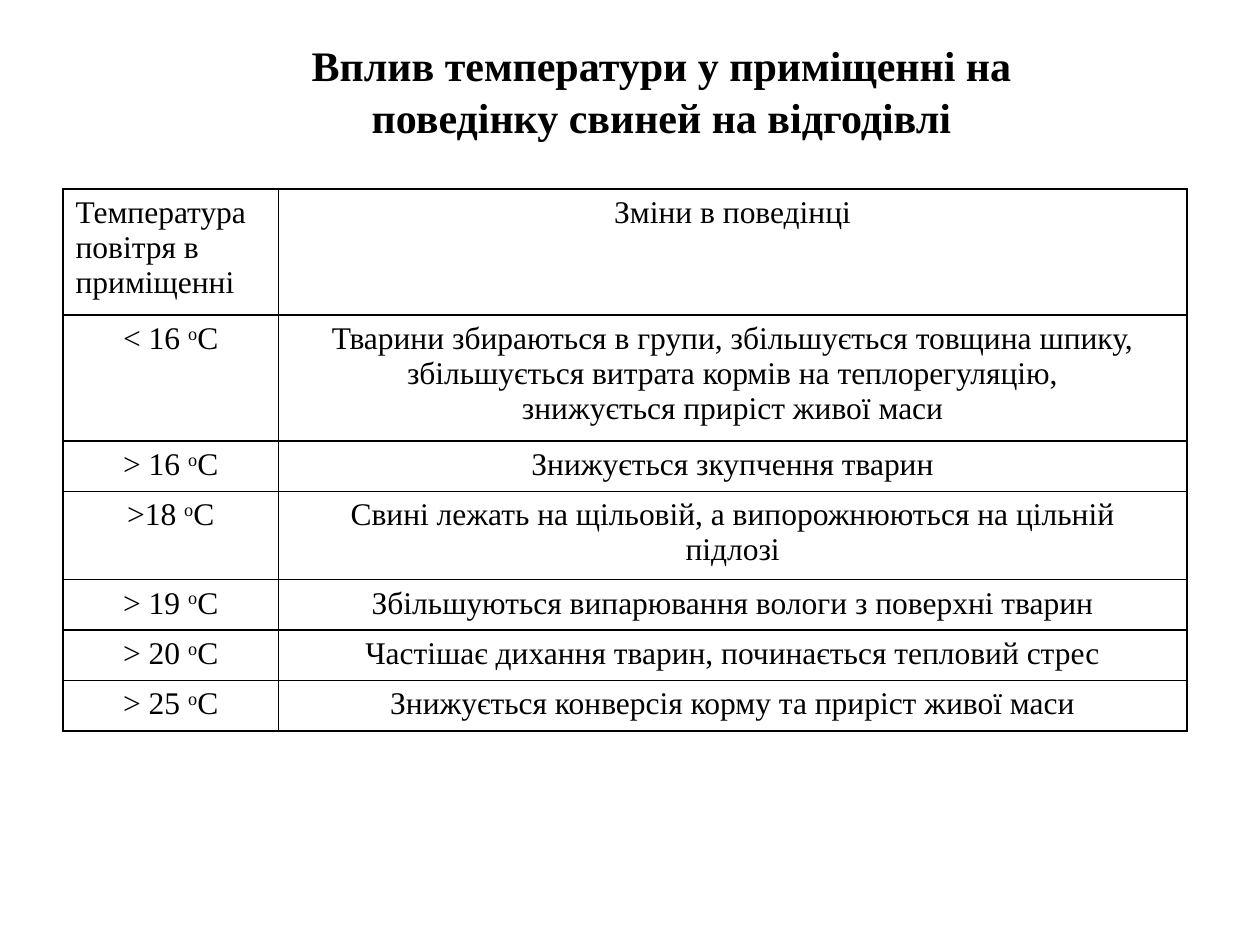
from lxml.etree import SubElement
from pptx import Presentation
from pptx.dml.color import RGBColor
from pptx.enum.text import MSO_ANCHOR, MSO_AUTO_SIZE, PP_ALIGN
from pptx.oxml.ns import qn
from pptx.util import Inches, Pt

COLORS = {"text": "000000", "border": "000000"}
FONT = "Times New Roman"
TITLE = "Вплив температури у приміщенні на поведінку свиней на відгодівлі"
DEGREE = " ᵒC"
COLUMN_WIDTHS = [1.71, 7.21]
ROWS = [
    (1.0, ["Температура повітря в", "приміщенні"], ["Зміни в поведінці"]),
    (1.0, "< 16 ", ["Тварини збираються в групи, збільшується товщина шпику, "
                    "збільшується витрата кормів на теплорегуляцію,",
                    "знижується приріст живої маси"]),
    (0.4, "> 16 ", ["Знижується зкупчення тварин"]),
    (0.7, ">18 ", ["Свині лежать на щільовій, а випорожнюються на цільній", "підлозі"]),
    (0.4, "> 19 ", ["Збільшуються випарювання вологи з поверхні тварин"]),
    (0.4, "> 20 ", ["Частішає дихання тварин, починається тепловий стрес"]),
    (0.4, "> 25 ", ["Знижується конверсія корму та приріст живої маси"]),
]


def format_paragraph(paragraph, size, alignment, bold=False):
    """Give a paragraph its font, colour and alignment."""
    paragraph.alignment = alignment
    font = paragraph.font
    font.name, font.size, font.bold = FONT, Pt(size), bold
    font.color.rgb = RGBColor.from_string(COLORS["text"])


def add_title(slide, left, top, width, height):
    """Place the slide title in its placeholder."""
    title = slide.shapes.title
    title.left, title.top, title.width, title.height = map(Inches, (left, top, width, height))
    frame = title.text_frame
    frame.text = TITLE
    frame.word_wrap = True
    frame.auto_size = MSO_AUTO_SIZE.NONE
    frame.vertical_anchor = MSO_ANCHOR.TOP
    frame.margin_left, frame.margin_right = Inches(0.69), Inches(0.1)
    frame.margin_top, frame.margin_bottom = Inches(0.12), 0
    paragraph = frame.paragraphs[0]
    format_paragraph(paragraph, 24, PP_ALIGN.CENTER, bold=True)
    paragraph.line_spacing = 1.05


def style_cell(cell):
    """Clear the cell fill and draw thin borders on all four sides."""
    properties = cell._tc.get_or_add_tcPr()
    for side in ("a:lnL", "a:lnR", "a:lnT", "a:lnB"):
        line = SubElement(properties, qn(side), w=str(Pt(1)))
        fill = SubElement(line, qn("a:solidFill"))
        SubElement(fill, qn("a:srgbClr"), val=COLORS["border"])
    cell.fill.background()


def write_lines(cell, lines, alignment):
    """Write one paragraph for each line of a cell."""
    cell.text = "\n".join(lines)
    for paragraph in cell.text_frame.paragraphs:
        format_paragraph(paragraph, 18, alignment)


def write_temperature(cell, value):
    """Write a centred temperature with a raised degree sign."""
    paragraph = cell.text_frame.paragraphs[0]
    format_paragraph(paragraph, 18, PP_ALIGN.CENTER)
    for text in (value, "o", "C"):
        run = paragraph.add_run()
        run.text = text
        if text == "o":
            run.font._element.set("baseline", "30000")


def add_behaviour_table(slide, left, top):
    """Place the table of temperatures and behaviour changes."""
    width, height = sum(COLUMN_WIDTHS), sum(row[0] for row in ROWS)
    frame = slide.shapes.add_table(len(ROWS), len(COLUMN_WIDTHS), *map(Inches, (left, top, width, height)))
    table = frame.table
    table.first_row = table.horz_banding = False
    for column, column_width in zip(table.columns, COLUMN_WIDTHS):
        column.width = Inches(column_width)
    for row, (row_height, temperature, changes) in zip(table.rows, ROWS):
        row.height = Inches(row_height)
        first, second = row.cells
        if isinstance(temperature, str):
            write_temperature(first, temperature)
        else:
            write_lines(first, temperature, PP_ALIGN.LEFT)
        write_lines(second, changes, PP_ALIGN.CENTER)
        for cell in (first, second):
            style_cell(cell)


def main():
    """Build the presentation and save it."""
    presentation = Presentation()
    presentation.slide_width, presentation.slide_height = Inches(10), Inches(7.5)
    slide = presentation.slides.add_slide(presentation.slide_layouts[5])
    add_title(slide, 1.33, 0.17, 7.25, 1.31)
    add_behaviour_table(slide, 0.5, 1.5)
    presentation.save("out.pptx")


if __name__ == "__main__":
    main()
